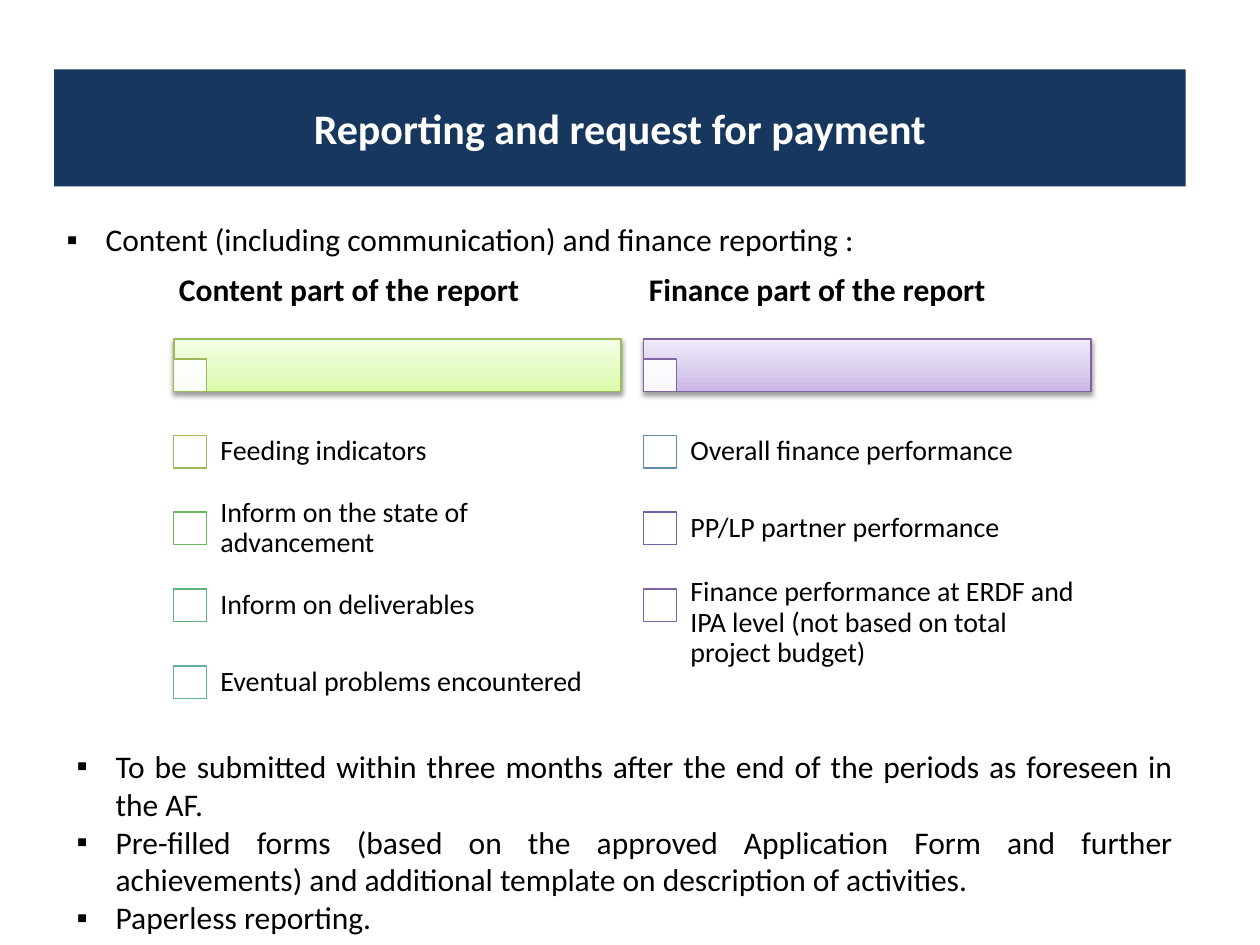
from lxml import etree
from pptx import Presentation
from pptx.dml.color import RGBColor
from pptx.enum.shapes import MSO_SHAPE
from pptx.enum.text import MSO_ANCHOR, MSO_AUTO_SIZE, PP_ALIGN
from pptx.oxml.ns import qn
from pptx.util import Inches, Pt

RECTANGLE = MSO_SHAPE.RECTANGLE
MIDDLE, TOP = MSO_ANCHOR.MIDDLE, MSO_ANCHOR.TOP
LEFT, CENTER, JUSTIFY = PP_ALIGN.LEFT, PP_ALIGN.CENTER, PP_ALIGN.JUSTIFY
GROW = MSO_AUTO_SIZE.SHAPE_TO_FIT_TEXT

FONT = "Calibri"
COLORS = {
    "banner": "17375E", "white": "FFFFFF", "black": "000000",
    "green": "9BBB59", "leaf": "69B75B", "jade": "5CB37C", "teal": "5EAFA6",
    "blue": "608CAB", "indigo": "6267A6", "purple": "8064A2",
    "green_dark": "DAFDA7", "green_mid": "E4FCC2", "green_light": "F5FFE7",
    "purple_dark": "C9B5E8", "purple_mid": "D8CBEE", "purple_light": "F0EAF9",
}
COLUMN_WIDTH, BAR_TOP, BAR_HEIGHT = 3.55, 2.69, 0.42
BOX_SIZE, ROW_TOP, ROW_HEIGHT = 0.26, 3.28, 0.61
LABEL_INDENT = 0.25
BULLET_INDENT = 0.31

REPORT_PARTS = [
    {
        "left": 1.38, "heading": "Content part of the report", "accent": "green",
        "items": [
            ("Feeding indicators", "green", 0),
            ("Inform on the state of advancement", "leaf", 0),
            ("Inform on deliverables", "jade", 0),
            ("Eventual problems encountered", "teal", 0),
        ],
    },
    {
        "left": 5.11, "heading": "Finance part of the report", "accent": "purple",
        "items": [
            ("Overall finance performance", "blue", 0),
            ("PP/LP partner performance", "indigo", 0),
            ("Finance performance at ERDF and IPA level "
             "(not based on total project budget)", "purple", 0.14),
        ],
    },
]
INTRODUCTION = ["Content (including communication) and finance reporting :"]
SUBMISSION_RULES = [
    "To be submitted within three months after the end of the periods as foreseen in the AF.",
    "Pre-filled forms (based on the approved Application Form and further "
    "achievements) and additional template on description of activities.",
    "Paperless reporting.",
]


def rgb(name):
    """Return the named colour."""
    return RGBColor.from_string(COLORS[name])


def add_color(parent, name, alpha=None):
    """Append a colour element, with an optional opacity in percent."""
    color = etree.SubElement(parent, qn("a:srgbClr"), val=COLORS[name])
    if alpha is not None:
        etree.SubElement(color, qn("a:alpha"), val=str(alpha * 1000))


def add_rectangle(slide, left, top, width, height, fill, outline=None):
    """Add a flat rectangle with an optional thin outline."""
    rectangle = slide.shapes.add_shape(
        RECTANGLE, Inches(left), Inches(top), Inches(width), Inches(height))
    rectangle.shadow.inherit = False
    rectangle.fill.solid()
    rectangle.fill.fore_color.rgb = rgb(fill)
    if outline:
        rectangle.line.color.rgb = rgb(outline)
        rectangle.line.width = Pt(0.75)
    else:
        rectangle.line.fill.background()
    return rectangle


def add_bar(slide, left, accent):
    """Add the shaded, shadowed bar under a heading."""
    bar = add_rectangle(slide, left, BAR_TOP, COLUMN_WIDTH, BAR_HEIGHT, "white", accent)
    bar.fill.gradient()
    bar.fill.gradient_angle = 90
    properties = bar.element.spPr
    stops = properties.find(qn("a:gradFill")).find(qn("a:gsLst"))
    for stop in list(stops):
        stops.remove(stop)
    for position, tone in ((0, "dark"), (35, "mid"), (100, "light")):
        stop = etree.SubElement(stops, qn("a:gs"), pos=str(position * 1000))
        add_color(stop, f"{accent}_{tone}")
    shadow = etree.SubElement(
        properties.find(qn("a:effectLst")), qn("a:outerShdw"),
        blurRad=str(Pt(3.1)), dist=str(Pt(1.6)), dir="5400000", rotWithShape="0")
    add_color(shadow, "black", 38)


def add_bar_box(slide, left, accent):
    """Add the slightly transparent box in the corner of a bar."""
    top = BAR_TOP + BAR_HEIGHT - BOX_SIZE
    box = add_rectangle(slide, left, top, BOX_SIZE, BOX_SIZE, "white", accent)
    solid = box.element.spPr.find(qn("a:solidFill"))
    etree.SubElement(solid[0], qn("a:alpha"), val="90000")


def write_text(frame, lines, size, color="black", bold=False, align=LEFT,
               anchor=TOP, spacing=None):
    """Fill a text frame with evenly formatted paragraphs."""
    frame.word_wrap = True
    frame.vertical_anchor = anchor
    frame.text = "\n".join(lines)
    for paragraph in frame.paragraphs:
        paragraph.alignment = align
        if spacing:
            paragraph.line_spacing = spacing
        for run in paragraph.runs:
            run.font.name = FONT
            run.font.size = Pt(size)
            run.font.bold = bold
            run.font.color.rgb = rgb(color)


def add_text(slide, left, top, width, height):
    """Add an empty text box and return its frame."""
    return slide.shapes.add_textbox(
        Inches(left), Inches(top), Inches(width), Inches(height)).text_frame


def add_label(slide, left, top, width, height, text, size, insets, bold=False):
    """Add a vertically centred label with tight lines."""
    frame = add_text(slide, left, top, width, height)
    frame.margin_left = frame.margin_right = Inches(insets[0])
    frame.margin_top = frame.margin_bottom = Inches(insets[1])
    write_text(frame, [text], size, bold=bold, anchor=MIDDLE, spacing=0.9)


def add_bullets(slide, left, top, width, height, lines, align=LEFT):
    """Add a list with square bullets and hanging indents."""
    frame = add_text(slide, left, top, width, height)
    write_text(frame, lines, 18, align=align)
    frame.auto_size = GROW
    for paragraph in frame.paragraphs:
        properties = paragraph._p.get_or_add_pPr()
        properties.set("marL", str(Inches(BULLET_INDENT)))
        properties.set("indent", str(-Inches(BULLET_INDENT)))
        etree.SubElement(properties, qn("a:buFont"), typeface="Arial")
        etree.SubElement(properties, qn("a:buChar"), char="▪")


def add_report_part(slide, left, heading, accent, items):
    """Add one column: heading, bar and checklist."""
    add_bar(slide, left, accent)
    add_bar_box(slide, left, accent)
    add_label(slide, left, 1.94, COLUMN_WIDTH, 0.75, heading, 18, (0.04, 0.03), bold=True)
    for row, (text, outline, shift) in enumerate(items):
        top = ROW_TOP + row * ROW_HEIGHT
        box_top = top + (ROW_HEIGHT - BOX_SIZE) / 2
        add_rectangle(slide, left, box_top, BOX_SIZE, BOX_SIZE, "white", outline)
        add_label(slide, left + LABEL_INDENT, top + shift, COLUMN_WIDTH - LABEL_INDENT,
                  ROW_HEIGHT, text, 16, (0.12, 0.12))


def add_banner(slide, title):
    """Add the title banner."""
    banner = add_rectangle(slide, 0.43, 0.55, 8.98, 0.93, "banner")
    write_text(banner.text_frame, [title], 24, "white", True, CENTER, MIDDLE)


def main():
    """Build the slide and save it."""
    presentation = Presentation()
    presentation.slide_width = Inches(10)
    presentation.slide_height = Inches(7.5)
    slide = presentation.slides.add_slide(presentation.slide_layouts[6])
    add_bullets(slide, 0.43, 1.7, 8.43, 0.4, INTRODUCTION)
    for part in REPORT_PARTS:
        add_report_part(slide, **part)
    add_bullets(slide, 0.51, 5.88, 8.9, 1.62, SUBMISSION_RULES, JUSTIFY)
    add_banner(slide, "Reporting and request for payment")
    presentation.save("out.pptx")


if __name__ == "__main__":
    main()
